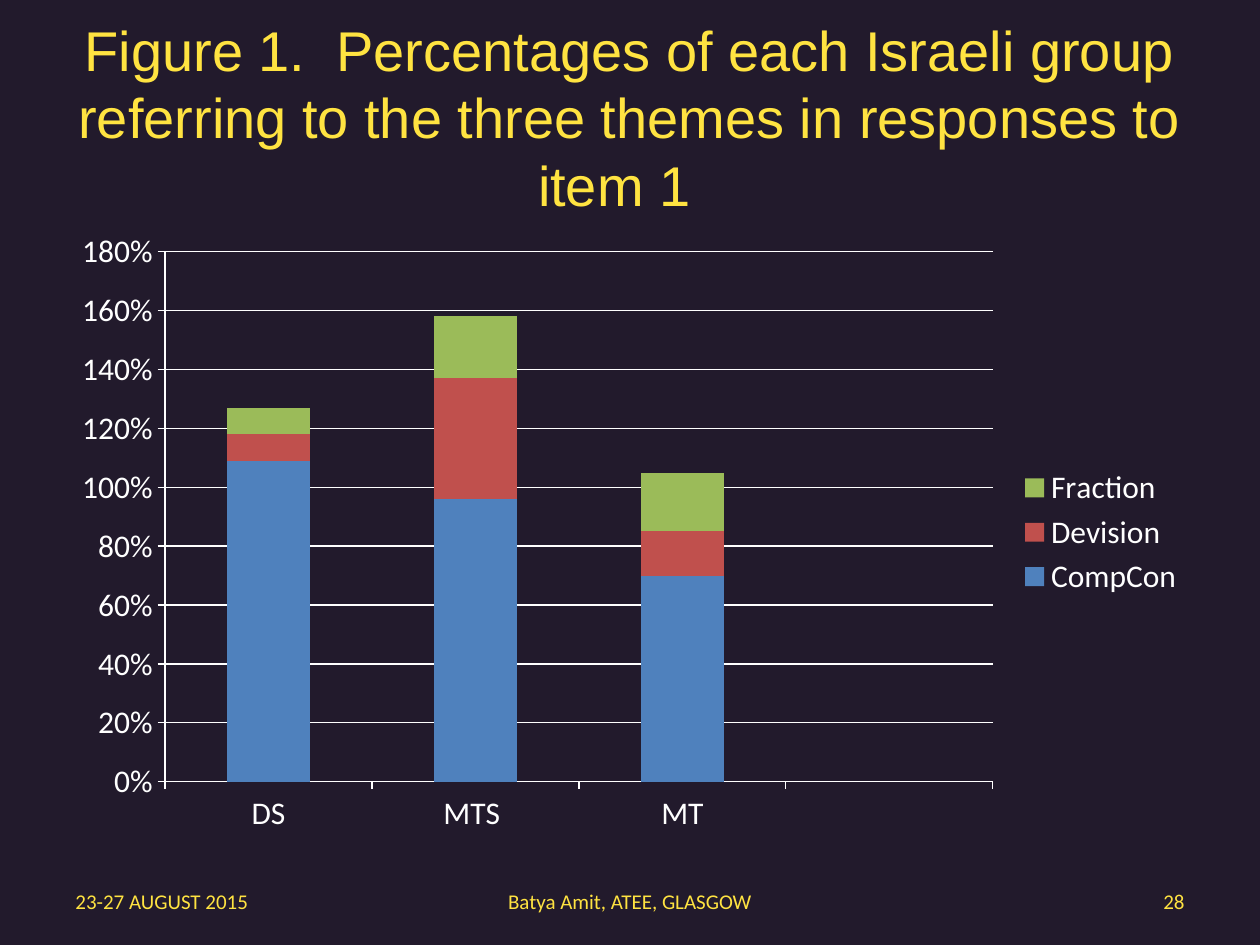
from lxml import etree
from pptx import Presentation
from pptx.chart.data import CategoryChartData
from pptx.dml.color import RGBColor
from pptx.enum.chart import XL_CHART_TYPE as CT, XL_LEGEND_POSITION as LP, XL_TICK_MARK as TM
from pptx.enum.text import MSO_ANCHOR, PP_ALIGN as AL
from pptx.oxml.ns import qn
from pptx.util import Pt

# Content
BACK, YELLOW, WHITE = "221A2C", "FFE341", "FFFFFF"
TITLE = ("Figure 1.  Percentages of each Israeli group referring to the "
         "three themes in responses to item 1  ")
CATEGORIES = ["DS", "MTS ", "MT", ""]
SERIES = [
    ("CompCon", (1.09, 0.96, 0.7, None), "4F81BD"),
    ("Devision", (0.09, 0.41, 0.15, None), "C0504D"),
    ("Fraction", (0.09, 0.21, 0.2, None), "9BBB59"),
]
# Text, left, top, width, height, alignment, font, size
TEXTS = [
    (TITLE, 36, 21.6, 648, 90, AL.CENTER, "Arial", 32),
    ("23-27 AUGUST 2015", 36, 500.4, 168, 28.8, AL.LEFT, "Calibri", 12),
    ("Batya Amit, ATEE, GLASGOW", 246, 500.4, 228, 28.8, AL.CENTER, "Calibri", 12),
    ("28", 516, 500.4, 168, 28.8, AL.RIGHT, "Calibri", 12),
]
CHART_BOX = (36, 126, 648, 356.4)
PLOT = {"x": 0.09, "y": 0.05, "w": 0.73, "h": 0.85}  # shares of the chart box


def rgb(value):
    return RGBColor.from_string(value)


def fill(part, color):
    part.fill.solid()
    part.fill.fore_color.rgb = rgb(color)


def style(font, **values):
    for name, value in values.items():
        setattr(font, name, value)


def add_text(s, text, left, top, width, height, align, face, size):
    tf = s.shapes.add_textbox(Pt(left), Pt(top), Pt(width), Pt(height)).text_frame
    tf.word_wrap = True
    tf.vertical_anchor = MSO_ANCHOR.MIDDLE
    p = tf.paragraphs[0]
    p.alignment = align
    r = p.add_run()
    r.text = text
    style(r.font, name=face, size=Pt(size))
    r.font.color.rgb = rgb(YELLOW)


def place_plot(chart):
    """Fix the inner plot area inside the chart."""
    area = chart._chartSpace.chart.plotArea
    for old in area.findall(qn("c:layout")):
        area.remove(old)
    layout = etree.Element(qn("c:layout"))
    area.insert(0, layout)
    manual = etree.SubElement(layout, qn("c:manualLayout"))
    values = {"layoutTarget": "inner", "xMode": "edge", "yMode": "edge", **PLOT}
    for tag, value in values.items():
        etree.SubElement(manual, qn(f"c:{tag}")).set("val", str(value))


def add_chart(s):
    data = CategoryChartData(number_format="0%")
    data.categories = CATEGORIES
    for name, values, _ in SERIES:
        data.add_series(name, values)
    chart = s.shapes.add_chart(CT.COLUMN_STACKED, *map(Pt, CHART_BOX), data).chart
    style(chart.font, name="Calibri", size=Pt(18))
    chart.font.color.rgb = rgb(WHITE)
    chart.has_title = False

    # Columns
    plot = chart.plots[0]
    style(plot, gap_width=150, overlap=100, vary_by_categories=False)
    for series, (_, _, color) in zip(plot.series, SERIES):
        fill(series.format, color)

    # Axes and gridlines
    value_axis, category_axis = chart.value_axis, chart.category_axis
    style(value_axis, minimum_scale=0, maximum_scale=1.8, major_unit=0.2,
          has_major_gridlines=True)
    style(value_axis.tick_labels, number_format="0%", number_format_is_linked=False)
    for axis in (value_axis, category_axis):
        style(axis, major_tick_mark=TM.OUTSIDE, minor_tick_mark=TM.NONE)
    for part in (value_axis, category_axis, value_axis.major_gridlines):
        part.format.line.color.rgb = rgb(WHITE)
        part.format.line.width = Pt(0.75)

    # Legend
    chart.has_legend = True
    style(chart.legend, position=LP.RIGHT, include_in_layout=False)
    place_plot(chart)


def main():
    prs = Presentation()
    prs.slide_width, prs.slide_height = Pt(720), Pt(540)
    s = prs.slides.add_slide(prs.slide_layouts[6])
    fill(s.background, BACK)
    add_chart(s)
    for item in TEXTS:
        add_text(s, *item)
    prs.save("out.pptx")


if __name__ == "__main__":
    main()
